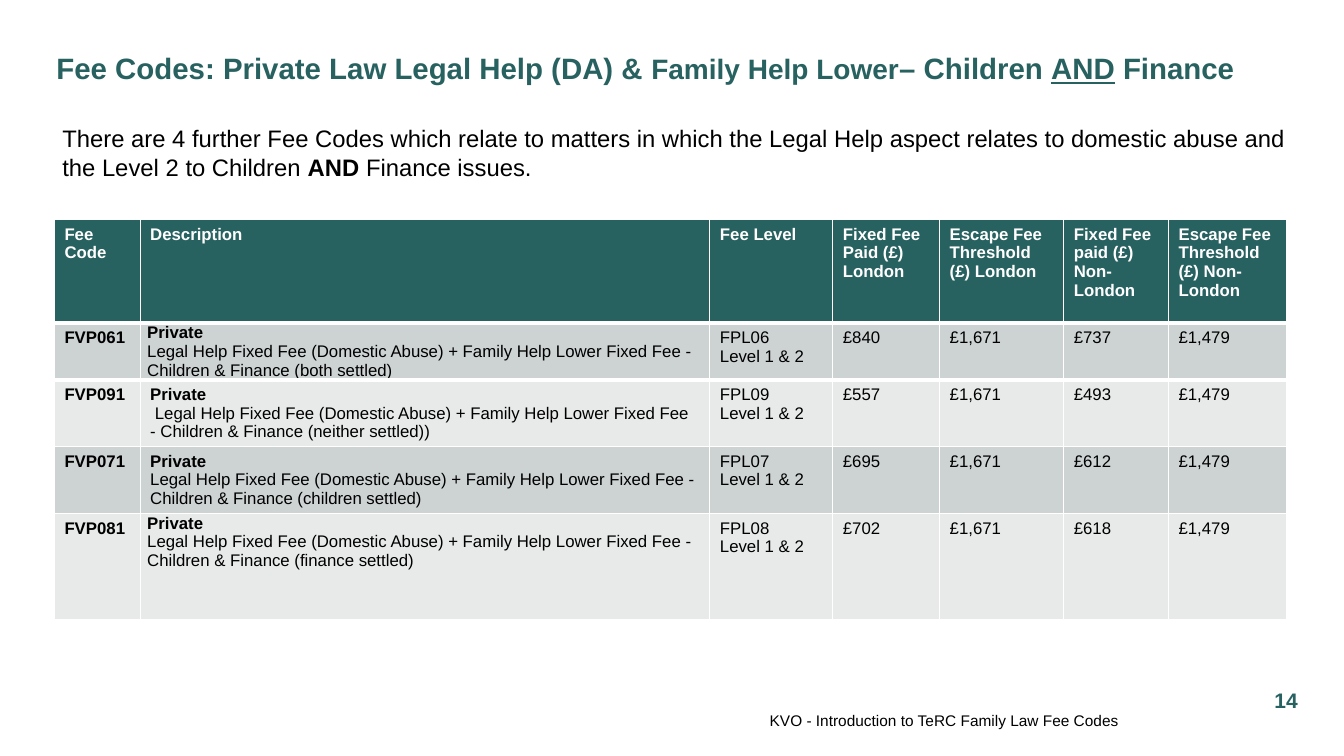
from lxml import etree
from pptx import Presentation
from pptx import util as u
from pptx.dml.color import RGBColor
from pptx.enum import text
from pptx.oxml import ns

GREEN = RGBColor(0x27, 0x61, 0x60)
BLACK = RGBColor(0, 0, 0)
WHITE = RGBColor(0xFF, 0xFF, 0xFF)
BANDS = [RGBColor(0xCD, 0xD2, 0xD2), RGBColor(0xE8, 0xEA, 0xEA)]

presentation = Presentation()
presentation.slide_width = u.Inches(13.33)
presentation.slide_height = u.Inches(7.5)
COLUMN = presentation.slide_width / 100
ROW = presentation.slide_height / 100
slide = presentation.slides.add_slide(presentation.slide_layouts[5])


def place(shape, left, top, width, height, margin=0):
    shape.left, shape.width = int(left * COLUMN), int(width * COLUMN)
    shape.top, shape.height = int(top * ROW), int(height * ROW)
    frame = shape.text_frame
    frame.word_wrap = True
    frame.auto_size = text.MSO_AUTO_SIZE.NONE
    frame.vertical_anchor = text.MSO_ANCHOR.MIDDLE
    if not margin:
        frame.margin_left = frame.margin_right = 0
        frame.margin_top = frame.margin_bottom = 0
    return frame.paragraphs[0]


def style(font, size, color, bold=False):
    font.name = "Arial"
    font.size = u.Pt(size)
    font.color.rgb = color
    font.bold = bold


title = place(slide.shapes.title, 4.2, 5.07, 91.6, 7.87)
title.alignment = text.PP_ALIGN.LEFT
for words, size, underline in [
    ("Fee Codes: Private Law Legal Help (DA) & ", 21, False),
    ("Family Help Lower", 20, False),
    ("– Children ", 21, False),
    ("AND", 21, True),
    (" Finance", 21, False),
]:
    run = title.add_run()
    run.text = words
    style(run.font, size, GREEN, True)
    run.font.underline = underline

footer = place(slide.shapes.add_textbox(0, 0, 0, 0), 24.16, 94, 59.11, 2.67)
footer.text = "KVO - Introduction to TeRC Family Law Fee Codes"
footer.alignment = text.PP_ALIGN.RIGHT
style(footer.runs[0].font, 11, BLACK)

number = place(slide.shapes.add_textbox(0, 0, 0, 0), 93.85, 90, 3.68, 5.33)
number.text = "14"
number.alignment = text.PP_ALIGN.CENTER
style(number.runs[0].font, 15, GREEN, True)

headings = ["Fee Code", "Description", "Fee Level", "Fixed Fee Paid (£) London",
            "Escape Fee Threshold (£) London", "Fixed Fee paid (£) Non-London",
            "Escape Fee Threshold (£) Non-London"]
fees = [
    ("06", "Legal Help", "(both settled)", "£840", "£737"),
    ("09", " Legal Help", "(neither settled))", "£557", "£493"),
    ("07", "Legal Help", "(children settled)", "£695", "£612"),
    ("08", "Legal Help", "(finance settled)", "£702", "£618"),
]
rows = [headings]
for code, opening, outcome, london, elsewhere in fees:
    description = (f"Private\n{opening} Fixed Fee (Domestic Abuse) + Family Help Lower "
                   f"Fixed Fee - Children & Finance {outcome}")
    rows.append([f"FVP{code}1", description, f"FPL{code}\nLevel 1 & 2",
                 london, "£1,671", elsewhere, "£1,479"])

widths = [6.38, 42.39, 9.15, 7.95, 9.23, 7.8, 8.78]
heights = [13.7, 7.5, 8.85, 8.85, 14]
table = slide.shapes.add_table(
    len(rows), len(widths), int(4.05 * COLUMN), int(29.07 * ROW),
    int(sum(widths) * COLUMN), int(sum(heights) * ROW)).table
for column, width in zip(table.columns, widths):
    column.width = int(width * COLUMN)
for row, height in zip(table.rows, heights):
    row.height = int(height * ROW)

for r, values in enumerate(rows):
    for c, value in enumerate(values):
        cell = table.cell(r, c)
        cell.fill.solid()
        cell.fill.fore_color.rgb = BANDS[(r - 1) % 2] if r else GREEN
        cell.text_frame.text = value
        for p, paragraph in enumerate(cell.text_frame.paragraphs):
            bold = r == 0 or c == 0 or (c == 1 and p == 0)
            style(paragraph.runs[0].font, 12, BLACK if r else WHITE, bold)

for c in range(len(widths)):
    for r, edge in ((0, "a:lnB"), (1, "a:lnT")):
        border = etree.Element(ns.qn(edge), w=str(u.Pt(3)))
        fill = etree.SubElement(border, ns.qn("a:solidFill"))
        etree.SubElement(fill, ns.qn("a:srgbClr"), val=str(WHITE))
        table.cell(r, c).fill._xPr.insert(0, border)

for r in (1, 4):
    cell = table.cell(r, 1)
    cell.margin_left = cell.margin_right = u.Inches(0.07)
    cell.margin_top = cell.margin_bottom = 0
table.cell(1, 1).vertical_anchor = text.MSO_ANCHOR.MIDDLE

intro = place(slide.shapes.add_textbox(0, 0, 0, 0), 3.9, 15.73, 93.7, 8.93, margin=1)
for words, bold in [
    ("There are 4 further Fee Codes which relate to matters in which the Legal Help "
     "aspect relates to domestic abuse and the Level 2 to Children ", False),
    ("AND ", True),
    ("Finance issues.", False),
]:
    run = intro.add_run()
    run.text = words
    style(run.font, 17, BLACK, bold)

presentation.save("out.pptx")
